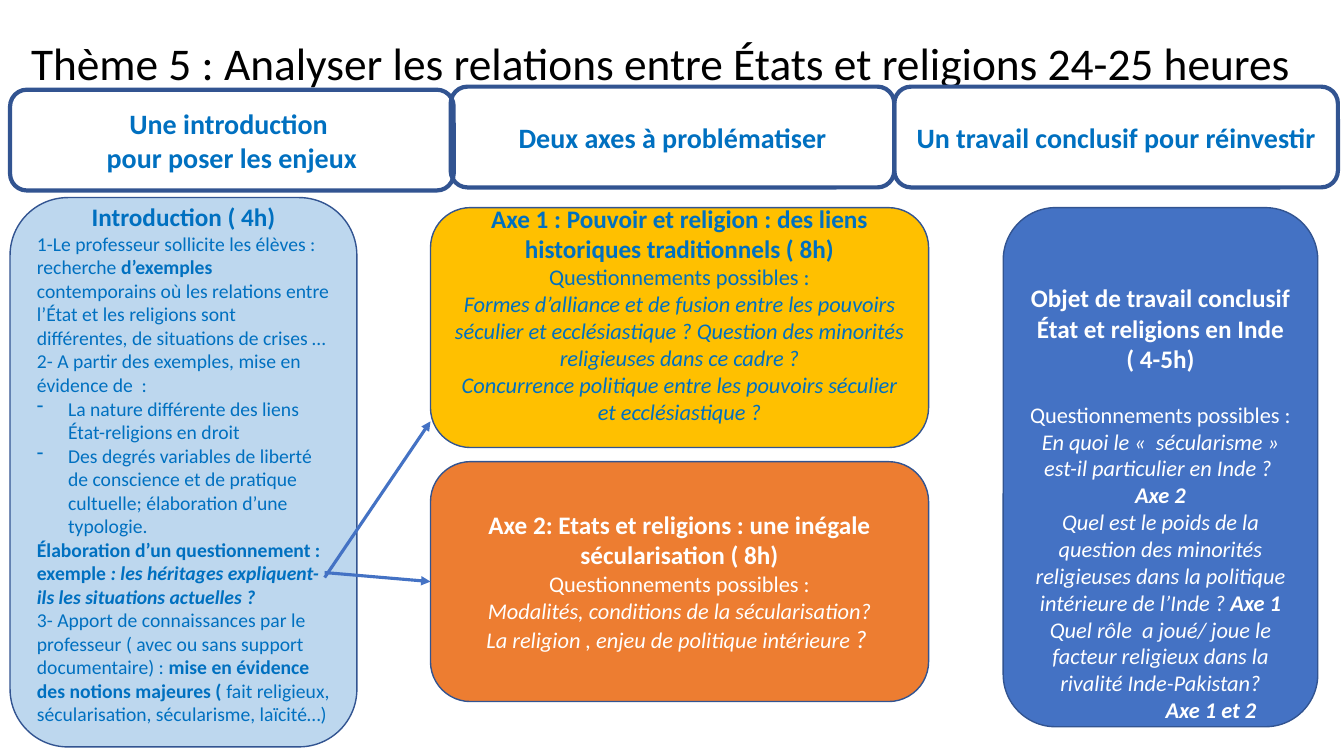
import dataclasses
import typing

import lxml.etree
import pptx
import pptx.dml.color
import pptx.enum.shapes
import pptx.enum.text
import pptx.oxml.ns
import pptx.util

Inches = pptx.util.Inches
Pt = pptx.util.Pt
Align = pptx.enum.text.PP_ALIGN
qn = pptx.oxml.ns.qn

FONT = "Calibri"
BLACK, WHITE, BLUE = "000000", "FFFFFF", "0070C0"
NAVY, ARROW = "325491", "4472C4"


@dataclasses.dataclass
class Run:
    text: str
    bold: bool = False
    slant: bool = False
    size: typing.Optional[float] = None


@dataclasses.dataclass
class Para:
    runs: list[Run]
    size: float
    center: bool = True
    dash: bool = False
    before: float = 0
    left: float = 0


@dataclasses.dataclass
class Box:
    left: float
    top: float
    width: float
    height: float
    paras: list[Para]
    ink: str
    fill: typing.Optional[str] = None
    line: float = 1
    over: float = 0.05   # top inset
    under: float = 0.05  # bottom inset


def color(code: str) -> pptx.dml.color.RGBColor:
    return pptx.dml.color.RGBColor.from_string(code)


def write(frame, paras: list[Para], ink: str) -> None:
    frame.word_wrap = True
    frame.vertical_anchor = pptx.enum.text.MSO_ANCHOR.MIDDLE
    for n, item in enumerate(paras):
        para = frame.paragraphs[0] if n == 0 else frame.add_paragraph()
        para.alignment = Align.CENTER if item.center else Align.LEFT
        if item.before:
            para.space_before = Pt(item.before)
        props = para._p.get_or_add_pPr()
        if item.left:
            props.set("marL", str(Inches(item.left)))
        if item.dash:
            props.set("marL", str(Inches(0.31)))
            props.set("indent", str(Inches(-0.31)))
            lxml.etree.SubElement(props, qn("a:buChar")).set("char", "-")
        for part in item.runs:
            run = para.add_run()
            run.text = part.text
            font = run.font
            font.name, font.size = FONT, Pt(part.size or item.size)
            font.bold, font.italic = part.bold, part.slant
            font.color.rgb = color(ink)


def draw(slide, box: Box):
    shape = slide.shapes.add_shape(
        pptx.enum.shapes.MSO_SHAPE.ROUNDED_RECTANGLE,
        Inches(box.left), Inches(box.top), Inches(box.width), Inches(box.height))
    shape.shadow.inherit = False
    if box.fill:
        shape.fill.solid()
        shape.fill.fore_color.rgb = color(box.fill)
    else:
        shape.fill.background()
    shape.line.color.rgb = color(NAVY)
    shape.line.width = Pt(box.line)
    frame = shape.text_frame
    frame.margin_top, frame.margin_bottom = Inches(box.over), Inches(box.under)
    write(frame, box.paras, box.ink)
    return shape


def arrow(slide, x: float, y: float, to_x: float, to_y: float):
    link = slide.shapes.add_connector(
        pptx.enum.shapes.MSO_CONNECTOR.STRAIGHT,
        Inches(x), Inches(y), Inches(to_x), Inches(to_y))
    link.line.color.rgb = color(ARROW)
    link.line.width = Pt(2.25)
    stroke = link.line._get_or_add_ln()
    lxml.etree.SubElement(stroke, qn("a:tailEnd")).set("type", "triangle")
    lxml.etree.SubElement(link._element.spPr, qn("a:effectLst"))
    return link


def head(text: str, size: float = 18) -> Para:
    return Para([Run(text, bold=True)], size)


def plain(text: str, before: float = 0) -> Para:
    return Para([Run(text)], 16, before=before)


def ask(text: str, axis: str = "") -> Para:
    runs = [Run(text, slant=True)]
    if axis:
        runs.append(Run(axis, bold=True, slant=True))
    return Para(runs, 16)


def note(*runs: Run, dash: bool = False) -> Para:
    return Para(list(runs), 14, center=False, dash=dash)


# Text of the panels
POSSIBLE = "Questionnements possibles :"
INTRO = [
    head("Introduction ( 4h)"),
    note(Run("1-Le professeur sollicite les élèves : recherche "),
         Run("d’exemples ", bold=True),
         Run("contemporains où les relations entre l’État et les religions "
             "sont différentes, de situations de crises …")),
    note(Run("2- A partir des exemples, mise en évidence de  :")),
    note(Run("La nature différente des liens État-religions en droit"), dash=True),
    note(Run("Des degrés variables de liberté de conscience et de pratique "
             "cultuelle; élaboration d’une typologie."), dash=True),
    note(Run("Élaboration d’un questionnement : exemple ", bold=True),
         Run(": les héritages expliquent-ils les situations actuelles ?",
             bold=True, slant=True)),
    note(Run("3- Apport de connaissances par le professeur ( avec ou sans "
             "support  documentaire) : "),
         Run("mise en évidence des notions majeures (", bold=True),
         Run(" fait religieux, sécularisation, sécularisme, laïcité…)")),
]
AXIS1 = [
    head("Axe 1 : Pouvoir et religion : des liens historiques traditionnels ( 8h)"),
    plain(POSSIBLE),
    ask("Formes d’alliance et de fusion entre les pouvoirs séculier et "
        "ecclésiastique ? Question des minorités religieuses dans ce cadre ?"),
    ask("Concurrence politique entre les pouvoirs séculier et ecclésiastique ?"),
]
AXIS2 = [
    head("Axe 2: Etats et religions : une inégale sécularisation ( 8h)"),
    plain(POSSIBLE),
    ask("Modalités, conditions de la sécularisation?"),
    Para([Run("La religion , enjeu de politique intérieure ", slant=True),
          Run("? ", slant=True, size=18)], 16),
]
FINAL = [
    head("Objet de travail conclusif"),
    head("État et religions en Inde"),
    head("( 4-5h)"),
    plain(POSSIBLE, before=19.5),
    ask("En quoi le «  sécularisme » est-il particulier en Inde ?  ", "Axe 2"),
    ask("Quel est le poids de la question des minorités religieuses dans la "
        "politique intérieure de l’Inde ? ", "Axe 1"),
    ask("Quel rôle  a joué/ joue le facteur religieux dans la rivalité "
        "Inde-Pakistan?"),
    Para([Run("Axe 1 et 2", bold=True, slant=True)], 16, left=1),
]
TABS = [
    (4.47, 0.86, ["Deux axes à problématiser"]),
    (0.1, 0.89, ["Une introduction ", "pour poser les enjeux"]),
    (8.87, 0.86, ["Un travail conclusif pour réinvestir"]),
]


def main() -> None:
    deck = pptx.Presentation()
    deck.slide_width, deck.slide_height = Inches(13.33), Inches(7.5)
    slide = deck.slides.add_slide(deck.slide_layouts[6])

    # Title
    title = slide.shapes.add_textbox(
        Inches(0.21), Inches(0.09), Inches(12.87), Inches(1.12)).text_frame
    write(title, [Para([Run("Thème 5 : Analyser les relations entre États et "
                            "religions 24-25 heures")], 32.4, center=False)], BLACK)
    title.paragraphs[0].line_spacing = 0.9

    # Panels
    draw(slide, Box(0.1, 1.96, 3.44, 5.45, INTRO, BLUE, "BDD7EE", over=0, under=0.17))
    draw(slide, Box(4.27, 2.06, 4.94, 2.38, AXIS1, BLUE, "FFC000", over=0, under=0.27))
    second = draw(slide, Box(4.27, 4.58, 4.94, 2.38, AXIS2, WHITE, "ED7D31"))
    draw(slide, Box(9.95, 2.06, 3.12, 5.15, FINAL, WHITE, "4472C4", over=0.71, under=0))

    # Column headers
    for left, top, lines in TABS:
        paras = [head(line, 20) for line in lines]
        draw(slide, Box(left, top, 4.4, 1, paras, BLUE, line=3))

    # Arrows to the two axes
    arrow(slide, 3.22, 5.73, 4.27, 4.18)
    arrow(slide, 3.22, 5.68, 4.27, 5.77).end_connect(second, 1)

    deck.save("out.pptx")


if __name__ == "__main__":
    main()
